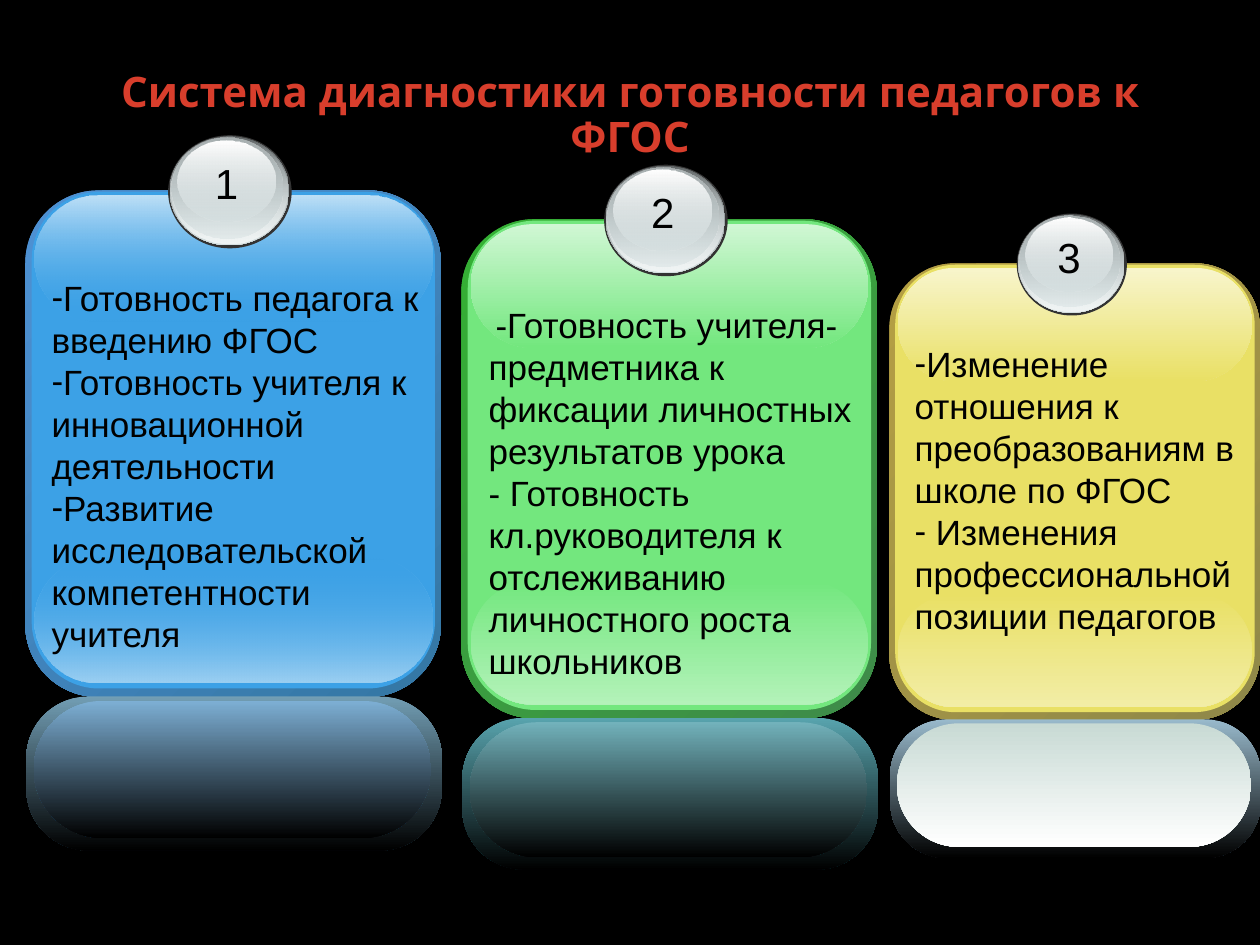
from dataclasses import dataclass

from lxml import etree
from pptx import Presentation
from pptx.dml.color import RGBColor
from pptx.enum.shapes import MSO_SHAPE as Preset
from pptx.enum.text import MSO_ANCHOR as Anchor, PP_ALIGN as Align
from pptx.oxml.ns import qn
from pptx.util import Cm, Pt

BODY_FONT = {"name": "Arial", "size": Pt(20)}
NUMBER_FONT = {"name": "Arial", "size": Pt(24)}
TITLE_FONT = {"name": "Noto Sans", "size": Pt(24), "bold": True}
BLACK, TITLE_RED = "000000", "D83E2C"

# Layers are laid out on a card of this size and scaled to each real card.
BASE_WIDTH, BASE_HEIGHT = 8.38, 10.16
NUMBER_CENTER = (4.06, -0.15)
NUMBER_SIZE = (1.0, 1.27)


@dataclass(frozen=True)
class Layer:
    box: tuple[float, float, float, float]
    colors: tuple[str, ...]  # RRGGBB, or RRGGBBAA with opacity
    angle: int = 90
    corner: float | None = None  # None means an ellipse


@dataclass(frozen=True)
class Card:
    number: str
    box: tuple[float, float, float, float]
    edge: tuple[str, str]
    face: str
    top_gloss: tuple[str, str]
    bottom_gloss: tuple[str, str]
    reflection: tuple[str, str]
    inner_reflection: tuple[str, str]
    text_box: tuple[float, float, float, float]
    points: tuple[str, ...]
    bulleted: bool = True
    first_indent: float = 0


BUBBLE = (
    Layer((2.88, -1.11, 2.49, 2.27), ("333333",)),
    Layer((2.91, -1.09, 2.41, 2.19), ("636869", "D6E1E2")),
    Layer((2.93, -1.07, 2.36, 2.14), ("D6E1E200", "F1F5F5")),
    Layer((2.95, -1.06, 2.24, 2.02), ("AAB2B3", "D6E1E27A")),
    Layer((3.07, -1.01, 1.98, 1.64), ("FFFFFF", "D6E1E261")),
)

CARDS = (
    Card("2", (9.3, 4.42, 8.38, 10.06), ("34B034", "3F8B4A"), "73E77E",
         ("D0F7D4", "73E77E"), ("73E77E", "B3F2B9"),
         ("58A4AE", BLACK), ("72B2BB", BLACK),
         (9.6, 5.99, 7.98, 7.87),
         ("-Готовность учителя-предметника к фиксации личностных результатов урока",
          "- Готовность кл.руководителя к отслеживанию личностного роста школьников"),
         bulleted=False, first_indent=0.14),
    Card("1", (0.51, 3.84, 8.38, 10.21), ("4E91D4", "3477A4"), "3CA1E6",
         ("BEE0F7", "3CA1E600"), ("3CA1E600", "9BCFF2"),
         ("729EB4", BLACK), ("7DAFD4", BLACK),
         (0.79, 5.44, 7.98, 7.87),
         ("Готовность педагога к введению ФГОС",
          "Готовность учителя к инновационной деятельности",
          "Развитие исследовательской компетентности учителя")),
    Card("3", (17.93, 5.31, 7.47, 9.2), ("B59F43", "8F8849"), "E9E065",
         ("F8F5CC", "E9E065"), ("E9E065", "F2EDA6"),
         ("99BACC", BLACK), ("C8DAD4", "FFFFFF"),
         (18.19, 6.78, 7.11, 6.17),
         ("Изменение отношения к преобразованиям в школе по ФГОС",
          " Изменения профессиональной позиции педагогов")),
)


def rgb(color: str) -> RGBColor:
    return RGBColor.from_string(color[:6])


def paint(shape, layer: Layer) -> None:
    if len(layer.colors) == 1:
        shape.fill.solid()
        shape.fill.fore_color.rgb = rgb(layer.colors[0])
        return
    shape.fill.gradient()
    shape.fill.gradient_angle = 360 - layer.angle
    for stop, color in zip(shape.fill.gradient_stops, layer.colors):
        stop.color.rgb = rgb(color)
    gradient_colors = shape._element.spPr.iter(qn("a:srgbClr"))
    for element, color in zip(gradient_colors, layer.colors):
        if len(color) == 8:
            opacity = round(int(color[6:], 16) / 255 * 100) * 1000
            etree.SubElement(element, qn("a:alpha"), val=str(opacity))


def add_layer(slide, card: Card, layer: Layer) -> None:
    left, top, width, height = card.box
    across, down = width / BASE_WIDTH, height / BASE_HEIGHT
    x, y, w, h = layer.box
    preset = Preset.OVAL if layer.corner is None else Preset.ROUNDED_RECTANGLE
    shape = slide.shapes.add_shape(preset, Cm(left + x * across), Cm(top + y * down),
                                   Cm(w * across), Cm(h * down))
    if layer.corner is not None:
        shape.adjustments[0] = layer.corner
    shape.shadow.inherit = False
    shape.line.fill.background()
    paint(shape, layer)


def add_text(slide, box: tuple, lines: tuple[str, ...], font: dict, color: str = BLACK,
             align=Align.LEFT, anchor=Anchor.TOP, wrap: bool = True,
             bulleted: bool = False, first_indent: float = 0, spacing: float = 1.0) -> None:
    frame = slide.shapes.add_textbox(*map(Cm, box)).text_frame
    frame.word_wrap = wrap
    frame.vertical_anchor = anchor
    for index, line in enumerate(lines):
        paragraph = frame.add_paragraph() if index else frame.paragraphs[0]
        paragraph.text = line
        paragraph.alignment = align
        paragraph.line_spacing = spacing
        properties = paragraph._p.get_or_add_pPr()
        properties.set("marL", "0")
        properties.set("indent", str(0 if index else int(Cm(first_indent))))
        if bulleted:
            etree.SubElement(properties, qn("a:buFont"), typeface="Arial")
            etree.SubElement(properties, qn("a:buChar"), char="-")
        run_font = paragraph.runs[0].font
        for attribute, value in font.items():
            setattr(run_font, attribute, value)
        run_font.color.rgb = rgb(color)


def add_card(slide, card: Card) -> None:
    panel = (
        Layer((0, 0, 8.38, 10.16), card.edge, 45, 0.175),
        Layer((0.13, 0.03, 8.13, 9.96), (card.face,), corner=0.167),
        Layer((0.19, 7.36, 8.01, 2.52), card.bottom_gloss, corner=0.5),
        Layer((0.19, 0.1, 8.01, 2.52), card.top_gloss, corner=0.5),
        Layer((0.02, 10.15, 8.38, 3.09), card.reflection, corner=0.404),
        Layer((0.17, 10.24, 8.01, 2.75), card.inner_reflection, corner=0.5),
    )
    for layer in panel + BUBBLE:
        add_layer(slide, card, layer)

    left, top, width, height = card.box
    number_width, number_height = NUMBER_SIZE
    number_left = left + NUMBER_CENTER[0] * width / BASE_WIDTH - number_width / 2
    number_top = top + NUMBER_CENTER[1] * height / BASE_HEIGHT - number_height / 2
    add_text(slide, (number_left, number_top, *NUMBER_SIZE), (card.number,), NUMBER_FONT,
             align=Align.CENTER, wrap=False)
    add_text(slide, card.text_box, card.points, BODY_FONT,
             bulleted=card.bulleted, first_indent=card.first_indent)


def main() -> None:
    deck = Presentation()
    deck.slide_width, deck.slide_height = Cm(25.4), Cm(19.05)
    slide = deck.slides.add_slide(deck.slide_layouts[6])
    slide.background.fill.solid()
    slide.background.fill.fore_color.rgb = rgb(BLACK)

    add_text(slide, (1.27, 0.76, 22.86, 3.18),
             ("Система диагностики готовности педагогов к ФГОС",), TITLE_FONT, TITLE_RED,
             align=Align.CENTER, anchor=Anchor.MIDDLE, spacing=0.9)
    for card in CARDS:
        add_card(slide, card)
    deck.save("out.pptx")


if __name__ == "__main__":
    main()
